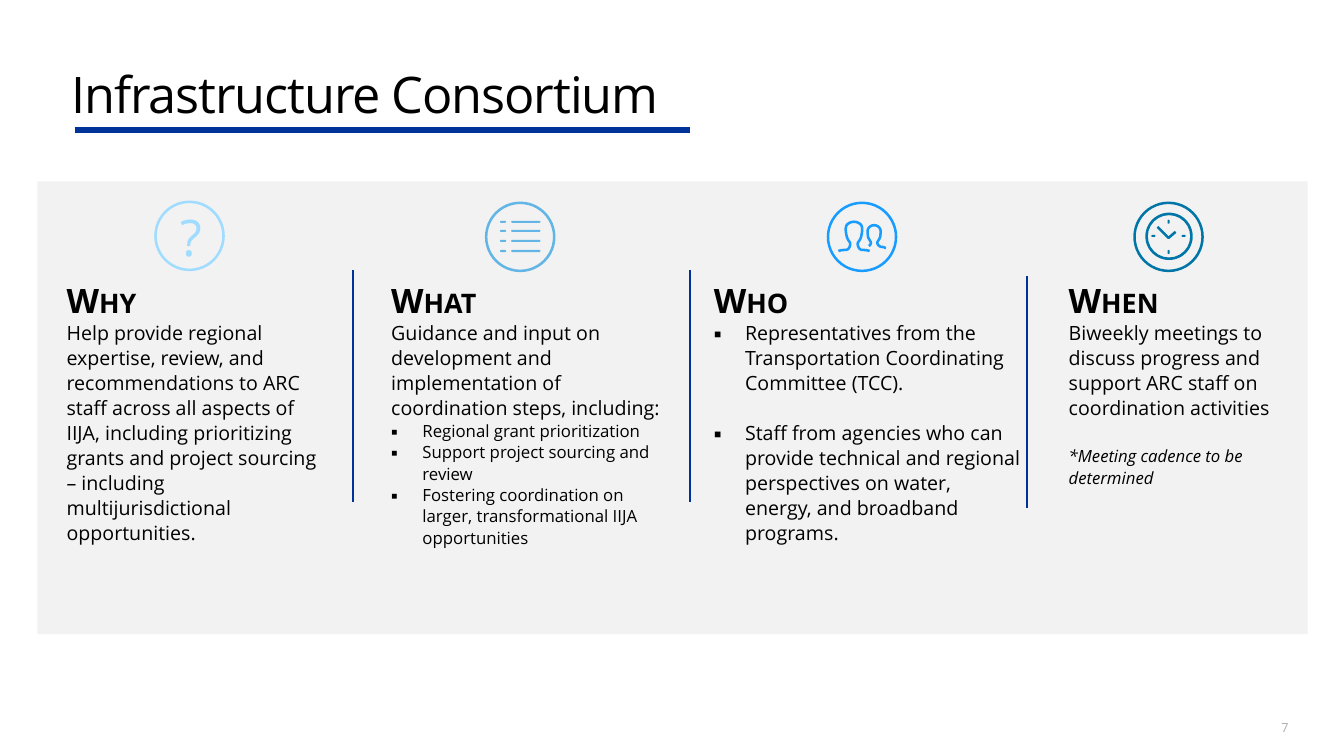
from lxml.etree import SubElement
from pptx import Presentation
from pptx.dml.color import RGBColor
from pptx.enum.shapes import MSO_CONNECTOR, MSO_SHAPE
from pptx.enum.text import MSO_ANCHOR
from pptx.oxml.ns import qn
from pptx.util import Pt

PX = 9144
FONT = "Open Sans"
COLOURS = {
    "text": "000000", "rule": "003399", "panel": "F2F2F2", "number": "AEAEAE",
    "why": "A0DCFF", "what": "62B5E5", "who": "199CFF", "when": "0076A8",
}


class SlideBuilder:
    def __init__(self, slide):
        self.slide = slide
        self.shapes = slide.shapes

    def colour(self, name):
        return RGBColor.from_string(COLOURS[name])

    def style(self, paragraph, size, colour="text", bold=False, italic=False):
        for run in paragraph.runs:
            run.font.name = FONT
            run.font.size = Pt(size)
            run.font.bold = bold
            run.font.italic = italic
            run.font.color.rgb = self.colour(colour)

    def frame(self, box, insets):
        frame = box.text_frame
        frame.word_wrap = True
        (frame.margin_left, frame.margin_top,
         frame.margin_right, frame.margin_bottom) = [n * PX for n in insets]
        return frame

    def title(self, text, left, top, width, height):
        title = self.shapes.title
        title.left, title.top = left * PX, top * PX
        title.width, title.height = width * PX, height * PX
        frame = self.frame(title, (0, 5, 0, 0))
        frame.vertical_anchor = MSO_ANCHOR.BOTTOM
        frame.text = text
        heading = frame.paragraphs[0]
        heading.alignment = 1
        heading.line_spacing = 0.9
        self.style(heading, 36)
        heading.runs[0].font._element.set("spc", "-80")

    def text(self, text, left, top, width, height, size, colour, insets):
        box = self.shapes.add_textbox(left * PX, top * PX, width * PX, height * PX)
        frame = self.frame(box, insets)
        frame.text = text
        self.style(frame.paragraphs[0], size, colour)

    def column(self, heading, entries, left, width, height):
        box = self.shapes.add_textbox(left * PX, 266 * PX, width * PX, height * PX)
        frame = self.frame(box, (19, 9, 9, 0))
        frame.text = "\n".join([heading] + [entry[0] for entry in entries])
        head, *body = frame.paragraphs
        head.line_spacing = 1.06
        self.style(head, 24, bold=True)
        head.runs[0].font._element.set("cap", "small")
        for paragraph, (_, size, kind, gap) in zip(body, entries):
            paragraph.line_spacing = 1.06
            paragraph.space_before = Pt(gap)
            if kind == "bullet":
                self.bullet(paragraph)
            self.style(paragraph, size, italic=kind == "note")

    def bullet(self, paragraph):
        properties = paragraph._p.get_or_add_pPr()
        properties.set("marL", str(31 * PX))
        properties.set("indent", str(-31 * PX))
        SubElement(properties, qn("a:buFont"), typeface=FONT)
        SubElement(properties, qn("a:buChar"), char="▪")

    def line(self, x1, y1, x2, y2, weight):
        line = self.shapes.add_connector(
            MSO_CONNECTOR.STRAIGHT, x1 * PX, y1 * PX, x2 * PX, y2 * PX)
        line.line.color.rgb = self.colour("rule")
        line.line.width = Pt(weight)
        SubElement(line._element.spPr, qn("a:effectLst"))

    def shape(self, preset, left, top, width, height, colour):
        shape = self.shapes.add_shape(
            preset, left * PX, top * PX, width * PX, height * PX)
        shape.shadow.inherit = False
        shape.fill.solid()
        shape.fill.fore_color.rgb = self.colour(colour)
        shape.line.fill.background()
        return shape

    def ring(self, left, top, size, colour):
        ring = self.shape(MSO_SHAPE.DONUT, left, top, size, size, colour)
        ring.adjustments[0] = 2.5 / size

    def dash(self, left, top, width, height, colour):
        dash = self.shape(MSO_SHAPE.ROUNDED_RECTANGLE, left, top, width, height, colour)
        dash.adjustments[0] = 0.5

    def stroke(self, points, colour, unit=PX):
        vertices = [(round(x * unit), round(y * unit)) for x, y in points]
        builder = self.shapes.build_freeform(*vertices[0], scale=1.0)
        builder.add_line_segments(vertices[1:], close=False)
        stroke = builder.convert_to_shape()
        stroke.shadow.inherit = False
        stroke.fill.background()
        stroke.line.color.rgb = self.colour(colour)
        stroke.line.width = Pt(1.8)

    def person(self, axis, half, left_start, colour):
        right = curve(half)
        left = [(-x, y) for x, y in curve(half[left_start:])]
        outline = left + right[-2::-1]
        self.stroke([(axis + x, y) for x, y in outline], colour, PX / 10)


def curve(controls, steps=8):
    points = [controls[0]]
    for i in range(0, len(controls) - 1, 3):
        for step in range(1, steps + 1):
            t = step / steps
            weights = ((1 - t) ** 3, 3 * t * (1 - t) ** 2, 3 * t * t * (1 - t), t ** 3)
            points.append(tuple(
                sum(w * point[axis] for w, point in zip(weights, controls[i:i + 4]))
                for axis in (0, 1)))
    return points


FRONT_PERSON = [
    (155, 2490), (140, 2485), (120, 2480), (100, 2480), (85, 2480), (75, 2480),
    (65, 2475), (50, 2470), (30, 2430), (40, 2405), (60, 2380), (70, 2360),
    (75, 2330), (85, 2280), (85, 2255), (70, 2230), (50, 2210), (25, 2200), (0, 2200)]
BACK_PERSON = [
    (117, 2460), (107, 2460), (97, 2450), (77, 2450), (72, 2450), (62, 2450),
    (52, 2440), (32, 2430), (27, 2405), (37, 2395), (47, 2375), (62, 2360),
    (62, 2335), (67, 2300), (67, 2275), (52, 2260), (37, 2240), (17, 2235), (0, 2235)]

COLUMNS = [
    ("Why", [
        ("Help provide regional expertise, review, and recommendations to ARC staff "
         "across all aspects of IIJA, including prioritizing grants and project "
         "sourcing – including multijurisdictional opportunities.", 14, "plain", 0),
    ], 47, 288, 297),
    ("What", [
        ("Guidance and input on development and implementation of coordination "
         "steps, including:", 14, "plain", 0),
        ("Regional grant prioritization", 12, "bullet", 0),
        ("Support project sourcing and review", 12, "bullet", 0),
        ("Fostering coordination on larger, transformational IIJA opportunities",
         12, "bullet", 0),
    ], 369, 300, 370),
    ("Who", [
        ("Representatives from the Transportation Coordinating Committee (TCC).",
         14, "bullet", 0),
        ("Staff from agencies who can provide technical and regional perspectives "
         "on water, energy, and broadband programs.", 14, "bullet", 18),
    ], 689, 333, 262),
    ("When", [
        ("Biweekly meetings to discuss progress and support ARC staff on "
         "coordination activities", 14, "plain", 0),
        ("*Meeting cadence to be determined", 12, "note", 18),
    ], 1041, 256, 353),
]


def main():
    deck = Presentation()
    deck.slide_width, deck.slide_height = 1333 * PX, 750 * PX
    page = SlideBuilder(deck.slides.add_slide(deck.slide_layouts[5]))

    page.title("Infrastructure Consortium", 71, 58, 1242, 65)
    page.line(74, 129, 684, 129, 4.5)
    page.shape(MSO_SHAPE.RECTANGLE, 37, 180, 1260, 449, "panel")
    for column in COLUMNS:
        page.column(*column)
    for x, top in ((350, 268), (684, 268), (1019, 274)):
        page.line(x, top, x, top + 230, 1.5)

    for left, top, topic in ((153, 199, "why"), (481, 200, "what"),
                             (820, 200, "who"), (1124, 200, "when")):
        page.ring(left, top, 70, topic)
    page.text("?", 169, 200, 43, 71, 36, "why", (10, 5, 10, 5))
    for row in range(4):
        for left, width in ((496, 6), (507, 29)):
            page.dash(left, 219 + row * 29 // 3, width, 2, "what")
    page.person(8670, BACK_PERSON, 6, "who")
    page.person(8470, FRONT_PERSON, 0, "who")
    page.ring(1136, 211, 47, "when")
    page.stroke([(1148, 225), (1159, 236), (1166, 230)], "when")
    for left, top, width, height in ((1158, 218, 2, 4), (1158, 248, 2, 4),
                                     (1172, 233, 4, 2), (1142, 233, 4, 2)):
        page.dash(left, top, width, height, "when")

    page.text("7", 1271, 714, 20, 15, 9, "number", (0, 0, 0, 0))
    deck.save("out.pptx")


if __name__ == "__main__":
    main()
